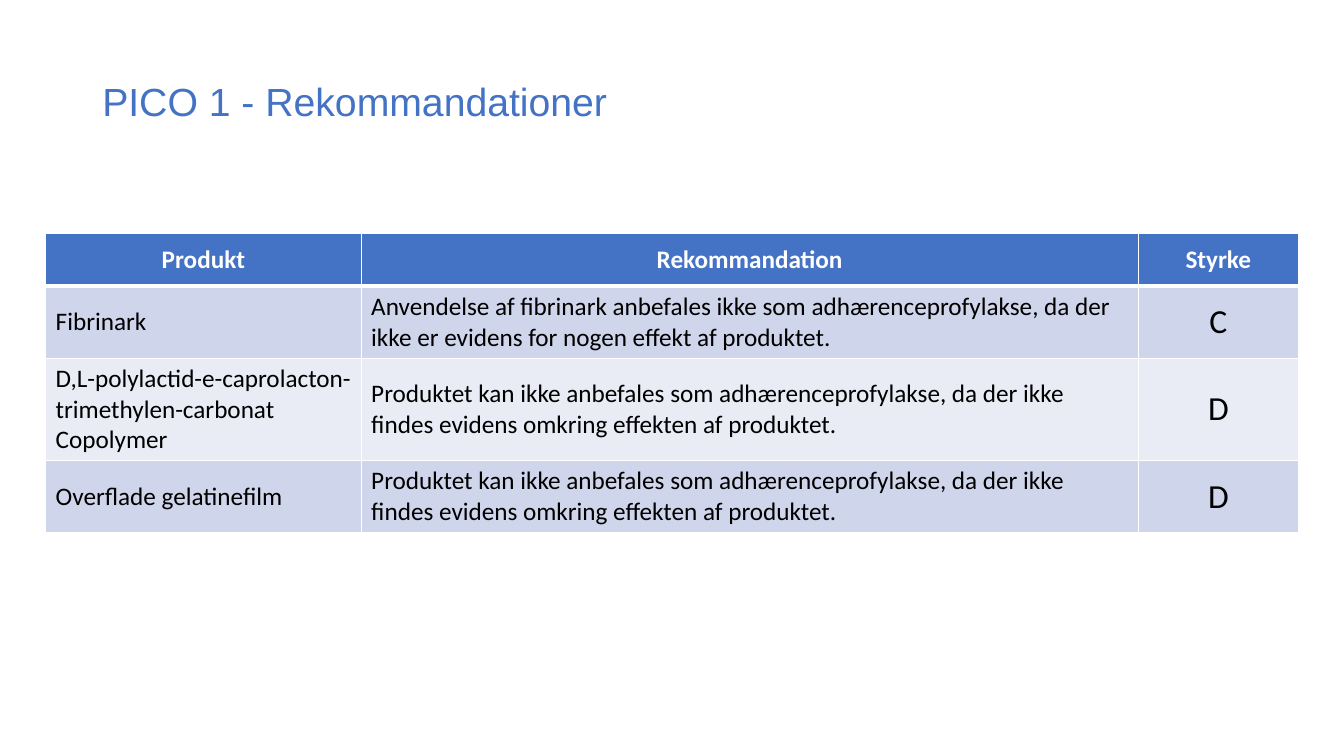
import pptx
import pptx.util
import pptx.dml.color
import pptx.enum.text
import pptx.oxml
import pptx.oxml.ns

Pt = pptx.util.Pt
ALIGN = pptx.enum.text.PP_ALIGN
MIDDLE = pptx.enum.text.MSO_ANCHOR.MIDDLE
COLOURS = {"blue": "4472C4", "white": "FFFFFF", "black": "000000",
           "band_dark": "CFD5EA", "band_light": "E9EBF5"}


def rgb(name):
    return pptx.dml.color.RGBColor.from_string(COLOURS[name])


def write_text(frame, text, size=18, font="Calibri", colour="black",
               bold=False, align=ALIGN.LEFT, line_spacing=None):
    frame.word_wrap = True
    paragraph = frame.paragraphs[0]
    paragraph.alignment = align
    paragraph.line_spacing = line_spacing
    run = paragraph.add_run()
    run.text = text
    run.font.size = Pt(size)
    run.font.name = font
    run.font.bold = bold
    run.font.color.rgb = rgb(colour)


class SlideBuilder:
    def __init__(self, presentation):
        self.slide = presentation.slides.add_slide(presentation.slide_layouts[6])

    def text_box(self, left, top, width, height, text, **text_format):
        shape = self.slide.shapes.add_textbox(Pt(left), Pt(top), Pt(width), Pt(height))
        shape.text_frame.vertical_anchor = MIDDLE
        write_text(shape.text_frame, text, **text_format)

    def borders(self, cell, widths):
        properties = cell._tc.get_or_add_tcPr()
        for position, (side, width) in enumerate(widths.items()):
            line = pptx.oxml.parse_xml(
                f'<a:{side} {pptx.oxml.ns.nsdecls("a")} w="{Pt(width)}"><a:solidFill>'
                f'<a:srgbClr val="{COLOURS["white"]}"/></a:solidFill></a:{side}>')
            properties.insert(position, line)

    def table(self, left, top, column_widths, row_heights, rows):
        shape = self.slide.shapes.add_table(
            len(rows), len(column_widths), Pt(left), Pt(top),
            Pt(sum(column_widths)), Pt(sum(row_heights)))
        table = shape.table
        for column, width in zip(table.columns, column_widths):
            column.width = Pt(width)
        for i, (texts, height) in enumerate(zip(rows, row_heights)):
            table.rows[i].height = Pt(height)
            header = i == 0
            fill = "blue" if header else ("band_light", "band_dark")[i % 2]
            for j, text in enumerate(texts):
                cell = table.cell(i, j)
                strength = j == len(texts) - 1
                cell.vertical_anchor = MIDDLE
                cell.fill.solid()
                cell.fill.fore_color.rgb = rgb(fill)
                self.borders(cell, {"lnL": 1, "lnR": 1, "lnT": 3 if i == 1 else 1,
                                    "lnB": 3 if header else 1})
                write_text(cell.text_frame, text,
                           size=24 if strength and not header else 18,
                           colour="white" if header else "black", bold=header,
                           align=ALIGN.CENTER if header or strength else ALIGN.LEFT)


def main():
    presentation = pptx.Presentation()
    presentation.slide_width = Pt(960)
    presentation.slide_height = Pt(540)
    builder = SlideBuilder(presentation)

    # Recommendations table
    no_evidence = ("Produktet kan ikke anbefales som adhærenceprofylakse, da der ikke "
                   "findes evidens omkring effekten af produktet.")
    builder.table(32.6, 166.4, [225.4, 555, 114.6], [38, 51.5, 73, 51.5], [
        ("Produkt", "Rekommandation", "Styrke"),
        ("Fibrinark", "Anvendelse af fibrinark anbefales ikke som adhærenceprofylakse, "
         "da der ikke er evidens for nogen effekt af produktet.", "C"),
        ("D,L-polylactid-e-caprolacton-trimethylen-carbonat Copolymer", no_evidence, "D"),
        ("Overflade gelatinefilm", no_evidence, "D"),
    ])

    # Title
    builder.text_box(66, 11.5, 828, 104.4, "PICO 1 - Rekommandationer",
                     size=28, font="Arial", colour="blue", line_spacing=1.5)

    presentation.save("out.pptx")


if __name__ == "__main__":
    main()
